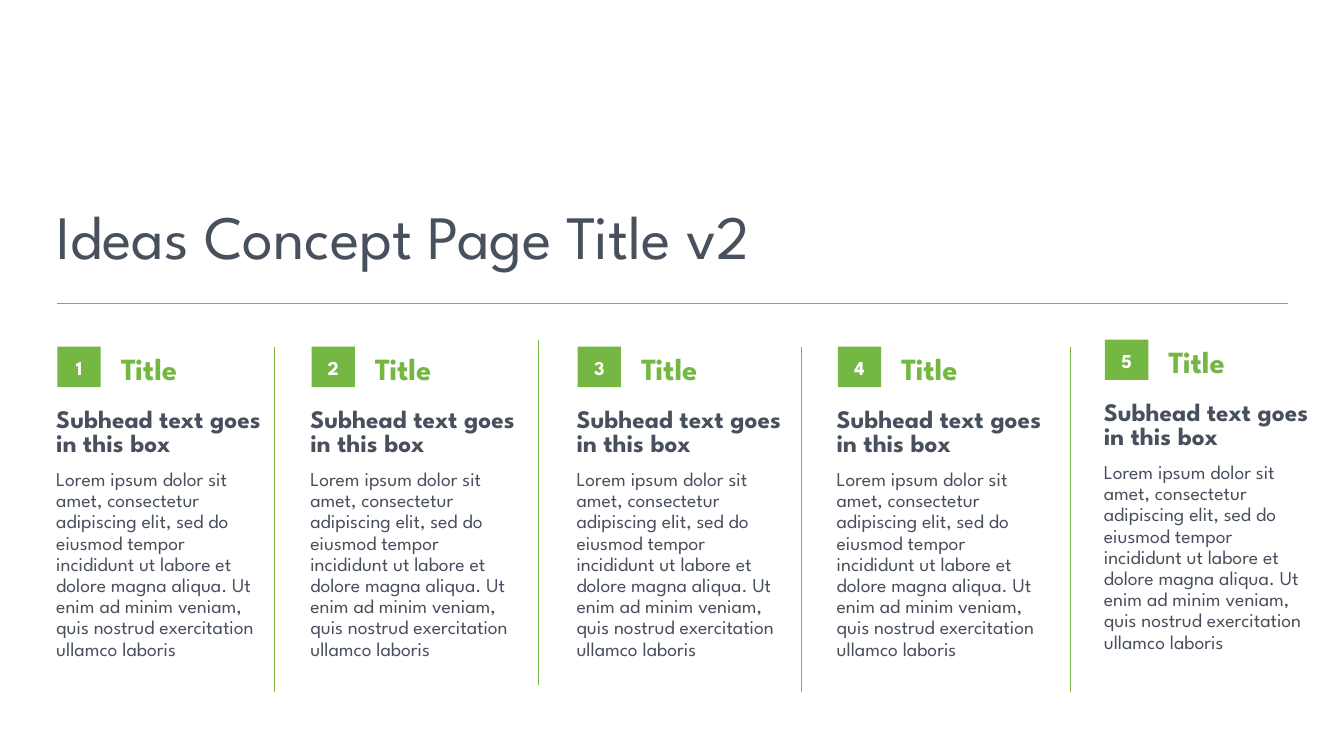
from pptx import Presentation
from pptx.dml.color import RGBColor
from pptx.enum.shapes import MSO_CONNECTOR, MSO_SHAPE
from pptx.enum.text import MSO_ANCHOR, PP_ALIGN
from pptx.oxml.ns import qn
from pptx.util import Inches, Pt
from lxml import etree

STRAIGHT, RECTANGLE = MSO_CONNECTOR.STRAIGHT, MSO_SHAPE.RECTANGLE
TOP, MIDDLE, BOTTOM = MSO_ANCHOR.TOP, MSO_ANCHOR.MIDDLE, MSO_ANCHOR.BOTTOM
LEFT, CENTER = PP_ALIGN.LEFT, PP_ALIGN.CENTER

GREEN = RGBColor(0x74, 0xB7, 0x43)
SLATE = RGBColor(0x48, 0x4F, 0x5D)
WHITE = RGBColor(0xFF, 0xFF, 0xFF)
TYPEFACE = "League Spartan"

SLIDE_W, SLIDE_H = 13.33, 7.5
MARGIN = 0.46
INSET = 0.11        # badge offset from the column's left edge
COLUMN_W = 2.27
BADGE_W, BADGE_H = 0.43, 0.4
DIVIDER_H = 3.43
ROW, RAISED_ROW = 3.44, 3.37

# Left and top of each idea column, then of each divider
COLUMNS = [(MARGIN, ROW), (2.98, ROW), (5.62, ROW), (8.2, ROW), (10.85, RAISED_ROW)]
DIVIDERS = [(2.72, ROW), (5.34, RAISED_ROW), (7.95, ROW), (10.62, ROW)]

HEADING = "Title"
SUBHEAD = "Subhead text goes in this box"
BODY = ("Lorem ipsum dolor sit amet, consectetur adipiscing elit, sed do "
        "eiusmod tempor incididunt ut labore et dolore magna aliqua. Ut enim "
        "ad minim veniam, quis nostrud exercitation ullamco laboris")


def write(holder, text, size, color, bold=False, anchor=BOTTOM, align=LEFT, spacing=0.9):
    frame = holder.text_frame
    frame.word_wrap = True
    frame.vertical_anchor = anchor
    frame.text = text
    paragraph = frame.paragraphs[0]
    for name, value in {"alignment": align, "line_spacing": spacing,
                        "space_before": Pt(0)}.items():
        setattr(paragraph, name, value)
    font = paragraph.runs[0].font
    for name, value in {"name": TYPEFACE, "size": Pt(size), "bold": bold}.items():
        setattr(font, name, value)
    font.color.rgb = color


def add_rule(slide, x1, y1, x2, y2):
    rule = slide.shapes.add_connector(STRAIGHT, *map(Inches, (x1, y1, x2, y2)))
    rule.line.color.rgb = GREEN
    rule.line.width = Pt(0.5)
    etree.SubElement(rule._element.spPr, qn("a:effectLst"))


def add_header(slide, left, top, width, height):
    title = slide.shapes.title
    box = {"left": left, "top": top, "width": width, "height": height}
    for name, value in box.items():
        setattr(title, name, Inches(value))
    write(title, "Ideas Concept Page Title v2", 44, SLATE, anchor=MIDDLE)
    rule_y = top + height + 0.21
    add_rule(slide, left + INSET, rule_y, 12.77, rule_y)


def add_idea(slide, number, left, top, width):
    # Numbered badge
    badge_x = left + INSET
    badge = slide.shapes.add_shape(
        RECTANGLE, *map(Inches, (badge_x, top, BADGE_W, BADGE_H)))
    badge.shadow.inherit = False
    badge.fill.solid()
    badge.fill.fore_color.rgb = GREEN
    badge.line.fill.background()

    # Texts: box relative to the column, wording and format
    texts = [
        ((INSET, 0.08, BADGE_W, 0.3), str(number),
         {"size": 14, "color": WHITE, "bold": True, "align": CENTER}),
        ((0.64, -0.01, width - 0.64, 0.46), HEADING,
         {"size": 22, "color": GREEN, "bold": True}),
        ((0, 0.53, width, 0.62), SUBHEAD,
         {"size": 18, "color": SLATE, "bold": True, "spacing": 0.8}),
        ((0, 1.17, width, 2.41), BODY,
         {"size": 14, "color": SLATE, "anchor": TOP}),
    ]
    for (dx, dy, w, h), text, style in texts:
        holder = slide.shapes.add_textbox(*map(Inches, (left + dx, top + dy, w, h)))
        write(holder, text, **style)


def main():
    deck = Presentation()
    deck.slide_width, deck.slide_height = Inches(SLIDE_W), Inches(SLIDE_H)
    slide = deck.slides.add_slide(deck.slide_layouts[5])

    add_header(slide, MARGIN, 1.96, 12.02, 0.84)
    for number, (left, top) in enumerate(COLUMNS, start=1):
        add_idea(slide, number, left, top, COLUMN_W)
    for x, top in DIVIDERS:
        add_rule(slide, x, top, x, top + DIVIDER_H)

    deck.save("out.pptx")


if __name__ == "__main__":
    main()
